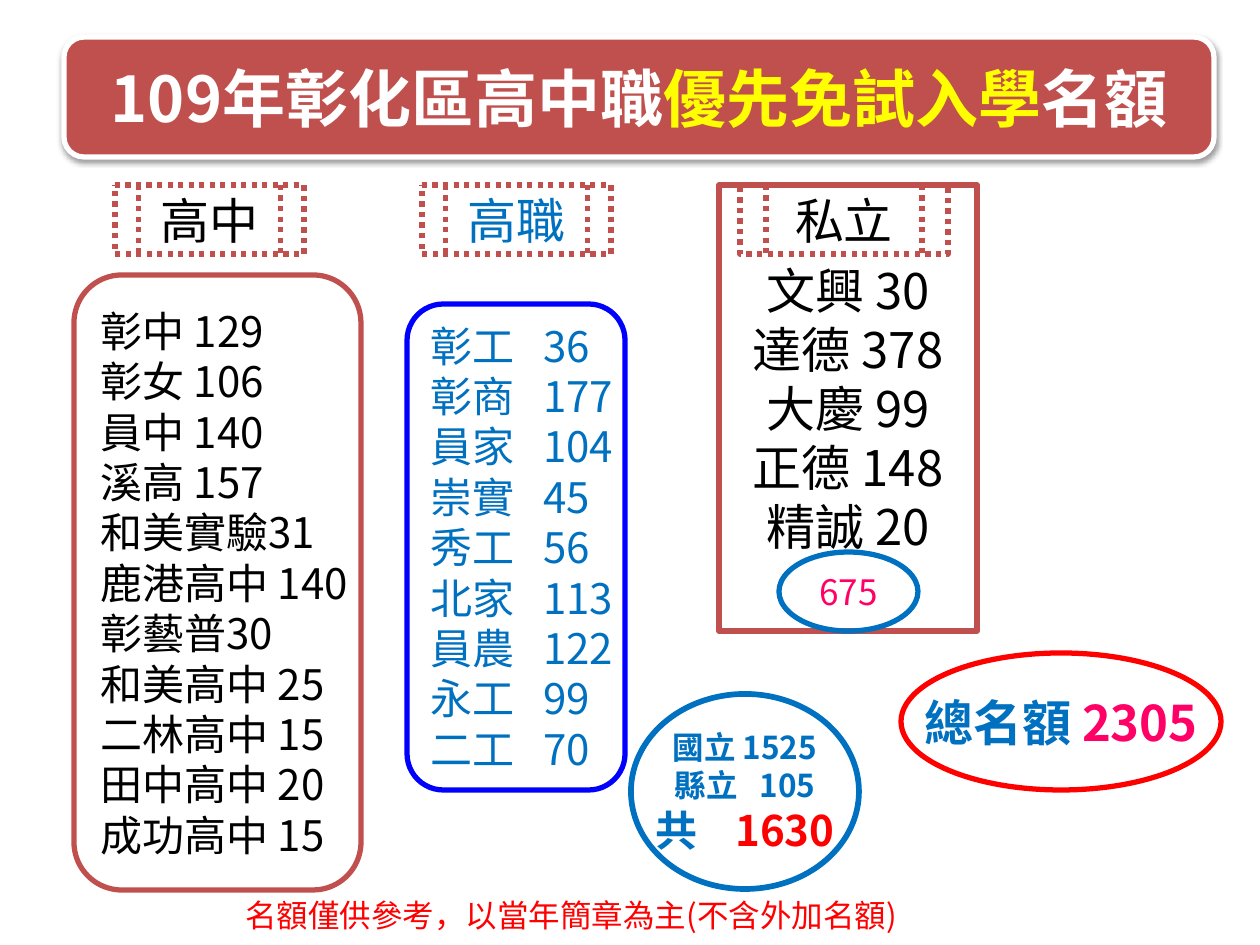
from dataclasses import dataclass

from lxml import etree
from pptx import Presentation
from pptx.dml.color import RGBColor
from pptx.enum.dml import MSO_LINE
from pptx.enum.shapes import MSO_SHAPE
from pptx.enum.text import MSO_ANCHOR, PP_ALIGN
from pptx.oxml.ns import qn
from pptx.util import Emu, Inches, Pt

EMU_PER_PX = 914400 / 126
FONT = "Noto Sans CJK SC"
LEFT, CENTER = PP_ALIGN.LEFT, PP_ALIGN.CENTER
HEADER = MSO_SHAPE.FLOWCHART_PREDEFINED_PROCESS
LIST = MSO_SHAPE.FLOWCHART_ALTERNATE_PROCESS
RECTANGLE, ROUNDED, OVAL = MSO_SHAPE.RECTANGLE, MSO_SHAPE.ROUNDED_RECTANGLE, MSO_SHAPE.OVAL
COLORS = {
    "brick": "C0504D",
    "black": "000000",
    "white": "FFFFFF",
    "sky": "0070C0",
    "blue": "0000FF",
    "red": "FF0000",
    "pink": "FF0066",
    "yellow": "FFFF00",
}


@dataclass(frozen=True)
class Span:
    text: str
    color: str


@dataclass(frozen=True)
class Line:
    spans: tuple[Span, ...]
    size: int
    bold: bool = False
    align: PP_ALIGN = CENTER
    tab: int = 0


@dataclass(frozen=True)
class Panel:
    kind: MSO_SHAPE
    area: tuple[int, int, int, int]
    outline: str
    lines: tuple[Line, ...]
    weight: float = 3
    dotted: bool = False
    fill: str = ""


def px(length: int) -> Emu:
    return Emu(round(length * EMU_PER_PX))


def rgb(name: str) -> RGBColor:
    return RGBColor.from_string(COLORS[name])


def make_lines(texts, color, size, align=CENTER, tab=0) -> tuple[Line, ...]:
    return tuple(Line((Span(text, color),), size, align=align, tab=tab) for text in texts)


def write_lines(frame, lines: tuple[Line, ...]) -> None:
    for index, line in enumerate(lines):
        para = frame.add_paragraph() if index else frame.paragraphs[0]
        para.alignment = line.align
        properties = para._p.get_or_add_pPr()
        if line.tab:
            tabs = etree.SubElement(properties, qn("a:tabLst"))
            etree.SubElement(tabs, qn("a:tab"), pos=str(px(line.tab)), algn="l")
        para.font.size = Pt(line.size)
        para.font.bold = line.bold
        para.font.name = FONT
        same_color = len({span.color for span in line.spans}) == 1
        if same_color:
            para.font.color.rgb = rgb(line.spans[0].color)
        etree.SubElement(properties.find(qn("a:defRPr")), qn("a:ea"), typeface=FONT)
        for span in line.spans:
            run = para.add_run()
            run.text = span.text
            if not same_color:
                run.font.color.rgb = rgb(span.color)


def draw_panel(page, panel: Panel):
    box = page.shapes.add_shape(panel.kind, *map(px, panel.area))
    box.shadow.inherit = False
    if panel.fill:
        box.fill.solid()
        box.fill.fore_color.rgb = rgb(panel.fill)
    else:
        box.fill.background()
    box.line.color.rgb = rgb(panel.outline)
    box.line.width = Pt(panel.weight)
    if panel.dotted:
        box.line.dash_style = MSO_LINE.ROUND_DOT
    frame = box.text_frame
    frame.word_wrap = bool(panel.fill)
    frame.vertical_anchor = MSO_ANCHOR.MIDDLE
    write_lines(frame, panel.lines)
    return box


def add_shadow(box) -> None:
    effects = box._element.spPr.find(qn("a:effectLst"))
    shadow = etree.SubElement(
        effects, qn("a:outerShdw"), blurRad=str(Pt(3.1)), dist=str(Pt(1.6)),
        dir="5400000", rotWithShape="0")
    color = etree.SubElement(shadow, qn("a:srgbClr"), val=COLORS["black"])
    etree.SubElement(color, qn("a:alpha"), val="38000")


def make_header(text: str, color: str, left: int, width: int) -> Panel:
    return Panel(HEADER, (left, 185, width, 69), "brick",
                 make_lines([text], color, 28), dotted=True)


SENIOR_HIGH = ["彰中 129", "彰女 106", "員中 140", "溪高 157", "和美實驗31", "鹿港高中 140",
               "彰藝普30", "和美高中 25", "二林高中 15", "田中高中 20", "成功高中 15"]
VOCATIONAL = ["彰工\t36", "彰商\t177", "員家\t104", "崇實\t45", "秀工\t56",
              "北家\t113", "員農\t122", "永工\t99", "二工\t70"]
PRIVATE = ["文興 30", "達德 378", "大慶 99", "正德 148", "精誠 20"]
PUBLIC_TOTAL = (
    Line((Span("國立 1525", "sky"),), 18, bold=True),
    Line((Span("縣立\t105", "sky"),), 18, bold=True, tab=85),
    Line((Span("共\t", "sky"), Span("1630", "red")), 24, bold=True, tab=80),
)
GRAND_TOTAL = (Line((Span("總名額 ", "sky"), Span("2305", "pink")), 28, bold=True),)
TITLE = (Line((Span("109年彰化區高中職", "white"), Span("優先免試入學", "yellow"),
               Span("名額", "white")), 36, bold=True),)

PANELS = [
    make_header("高中", "black", 115, 189),
    make_header("高職", "sky", 422, 189),
    make_header("私立", "black", 740, 208),
    Panel(LIST, (74, 275, 287, 615), "brick", make_lines(SENIOR_HIGH, "black", 24, LEFT)),
    Panel(LIST, (407, 304, 218, 486), "blue", make_lines(VOCATIONAL, "sky", 24, LEFT, 113)),
    Panel(RECTANGLE, (719, 185, 258, 446), "brick", make_lines(PRIVATE, "black", 28)),
    Panel(OVAL, (631, 694, 228, 195), "sky", PUBLIC_TOTAL, weight=3.25),
    Panel(OVAL, (779, 552, 139, 79), "sky", make_lines(["675"], "pink", 20)),
    Panel(OVAL, (901, 653, 320, 137), "red", GRAND_TOTAL),
]
TITLE_PANEL = Panel(ROUNDED, (64, 37, 1150, 120), "white", TITLE, fill="brick")


def main() -> None:
    deck = Presentation()
    deck.slide_width, deck.slide_height = Inches(10), Inches(7.5)
    page = deck.slides.add_slide(deck.slide_layouts[6])
    for panel in PANELS:
        draw_panel(page, panel)
    note = page.shapes.add_textbox(*map(px, (233, 890, 714, 50)))
    note.text_frame.word_wrap = True
    write_lines(note.text_frame,
                make_lines(["名額僅供參考，以當年簡章為主(不含外加名額)"], "red", 18, LEFT))
    add_shadow(draw_panel(page, TITLE_PANEL))
    deck.save("out.pptx")


if __name__ == "__main__":
    main()
